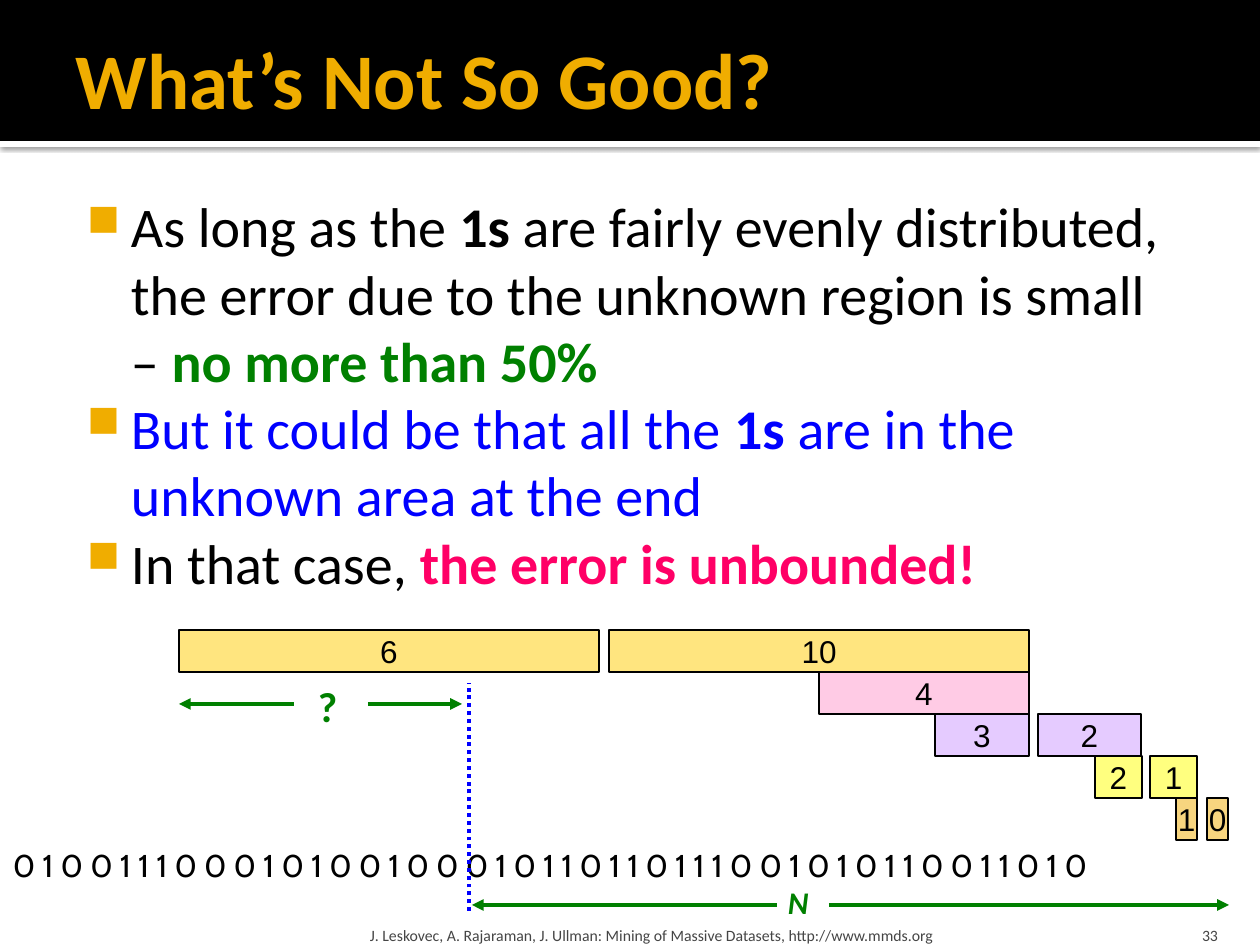
import pptx
import pptx.util
import pptx.dml.color
import pptx.enum.dml
import pptx.enum.shapes
import pptx.enum.text
import pptx.oxml
import pptx.oxml.ns

RGBColor = pptx.dml.color.RGBColor
Align = pptx.enum.text.PP_ALIGN
Anchor = pptx.enum.text.MSO_ANCHOR

BLACK = RGBColor(0, 0, 0)
WHITE = RGBColor(255, 255, 255)
GRAY = RGBColor(0x45, 0x45, 0x45)
AMBER = RGBColor(0xF0, 0xAD, 0x00)
GREEN = RGBColor(0, 0x80, 0)
BLUE = RGBColor(0, 0, 255)
ROSE = RGBColor(255, 0, 0x66)
GOLD = RGBColor(255, 0xCC, 0)
PINK = RGBColor(255, 0x99, 0xCC)
VIOLET = RGBColor(0xCC, 0x99, 255)
YELLOW = RGBColor(255, 255, 0)

PX_PER_INCH = 126
ROW_TOP, ROW_HEIGHT = 630, 42
BODY_BOX = (63, 179, 1134, 724)
BODY_INSETS = (8, 13, 13, 6)

BULLETS = [
    [("As long as the ", BLACK, False), ("1s ", BLACK, True),
     ("are fairly evenly distributed, the error due to the unknown region is small – ", BLACK, False),
     ("no more than 50%", GREEN, True)],
    [("But it could be that all the ", BLUE, False), ("1s ", BLUE, True),
     ("are in the unknown area at the end", BLUE, False)],
    [("In that case, ", BLACK, False), ("the error is unbounded!", ROSE, True)],
]
BITS = "010011100010100100010110110111001010110011010"

BUCKET_ROWS = [
    (GOLD, [("6", 179, 420), ("10", 609, 420)]),
    (PINK, [("4", 819, 210)]),
    (VIOLET, [("3", 935, 94), ("2", 1038, 103)]),
    (YELLOW, [("2", 1095, 47), ("1", 1150, 47)]),
    (AMBER, [("1", 1176, 21), ("0", 1207, 21)]),
]
ARROWS = [(777, 472, 905), (829, 1229, 905), (294, 179, 704), (368, 462, 704)]

LABELS = [
    ("What’s Not So Good?", (63, 10, 1134, 136), (13, 6, 6, 6), Anchor.MIDDLE, Align.LEFT,
     dict(name="Calibri", size=45, color=AMBER, bold=True)),
    ("33", (1130, 907, 101, 38), (13, 6, 13, 0), Anchor.BOTTOM, Align.RIGHT,
     dict(name="Calibri", size=9, color=GRAY)),
    ("J. Leskovec, A. Rajaraman, J. Ullman: Mining of Massive Datasets, http://www.mmds.org",
     (364, 907, 759, 38), (6, 6, 6, 0), Anchor.BOTTOM, Align.LEFT,
     dict(name="Calibri", size=9, color=GRAY)),
    (" ".join(BITS), (0, 840, 1236, 50), (13, 6, 13, 6), Anchor.TOP, Align.LEFT,
     dict(name="Cabin", size=18, color=BLACK)),
    ("N", (775, 877, 48, 50), (13, 6, 13, 6), Anchor.TOP, Align.LEFT,
     dict(name="Calibri", size=18, color=GREEN, bold=True, italic=True)),
    ("?", (305, 675, 44, 63), (13, 6, 13, 6), Anchor.TOP, Align.LEFT,
     dict(name="Calibri", size=24, color=GREEN, bold=True)),
]


def px(count):
    return pptx.util.Inches(count / PX_PER_INCH)


def add_xml(parent, tag, inner="", **attributes):
    listed = " ".join(f'{key}="{value}"' for key, value in attributes.items())
    element = pptx.oxml.parse_xml(
        f'<a:{tag} {pptx.oxml.ns.nsdecls("a")} {listed}>{inner}</a:{tag}>')
    parent.append(element)


def add_span(para, text, style):
    span = para.add_run()
    span.text = text
    for key, value in style.items():
        if key == "color":
            span.font.color.rgb = value
        else:
            setattr(span.font, key, pptx.util.Pt(value) if key == "size" else value)


def add_box(page, place, insets, anchor):
    box = page.shapes.add_textbox(*map(px, place))
    frame = box.text_frame
    sides = ("margin_left", "margin_top", "margin_right", "margin_bottom")
    settings = dict(zip(sides, map(px, insets)), word_wrap=True, vertical_anchor=anchor)
    for key, value in settings.items():
        setattr(frame, key, value)
    return frame


def add_rectangle(page, place, color):
    shape = page.shapes.add_shape(pptx.enum.shapes.MSO_SHAPE.RECTANGLE, *map(px, place))
    shape.shadow.inherit = False
    shape.fill.solid()
    shape.fill.fore_color.rgb = color
    shape.line.fill.background()
    return shape


def add_banner(page):
    strip = add_rectangle(page, (0, 141, 1260, 6), WHITE)
    effects = strip._element.spPr.find(pptx.oxml.ns.qn("a:effectLst"))
    add_xml(effects, "outerShdw", '<a:srgbClr val="000000"><a:alpha val="60000"/></a:srgbClr>',
            blurRad=pptx.util.Pt(2.5), dist=pptx.util.Pt(0.8), dir=5400000, rotWithShape=0)
    add_rectangle(page, (0, 0, 1260, 141), BLACK)


def add_bullets(page):
    frame = add_box(page, BODY_BOX, BODY_INSETS, Anchor.TOP)
    for index, spans in enumerate(BULLETS):
        para = frame.add_paragraph() if index else frame.paragraphs[0]
        for text, color, bold in spans:
            add_span(para, text, dict(name="Calibri", size=32, color=color, bold=bold))
        properties = para._p.get_or_add_pPr()
        properties.set("marL", str(px(60)))
        properties.set("indent", str(px(-44)))
        add_xml(properties, "buClr", f'<a:srgbClr val="{AMBER}"/>')
        add_xml(properties, "buSzPct", val=80000)
        add_xml(properties, "buChar", char="■")


def add_bucket(page, text, place, color):
    bucket = add_rectangle(page, place, color)
    add_xml(bucket.fill._xPr.solidFill.srgbClr, "alpha", val=50000)
    bucket.line.color.rgb = BLACK
    bucket.line.width = pptx.util.Pt(0.75)
    frame = bucket.text_frame
    frame.word_wrap = False
    frame.vertical_anchor = Anchor.MIDDLE
    para = frame.paragraphs[0]
    para.alignment = Align.CENTER
    add_span(para, text, dict(name="Arial", size=18, color=BLACK))


def add_line(page, ends, color):
    line = page.shapes.add_connector(pptx.enum.shapes.MSO_CONNECTOR.STRAIGHT, *map(px, ends))
    line.line.color.rgb = color
    line.line.width = pptx.util.Pt(2.25)
    add_xml(line._element.spPr, "effectLst")
    return line


def main():
    deck = pptx.Presentation()
    deck.slide_width, deck.slide_height = px(1260), px(945)
    page = deck.slides.add_slide(deck.slide_layouts[6])
    add_banner(page)
    add_bullets(page)
    for text, place, insets, anchor, alignment, style in LABELS:
        para = add_box(page, place, insets, anchor).paragraphs[0]
        para.alignment = alignment
        add_span(para, text, style)
    for row, (color, buckets) in enumerate(BUCKET_ROWS):
        for text, left, width in buckets:
            add_bucket(page, text, (left, ROW_TOP + row * ROW_HEIGHT, width, ROW_HEIGHT), color)
    for start, end, height in ARROWS:
        arrow = add_line(page, (start, height, end, height), GREEN)
        add_xml(arrow.line._get_or_add_ln(), "tailEnd", type="triangle")
    window_edge = add_line(page, (469, 911, 469, 683), BLUE)
    window_edge.line.dash_style = pptx.enum.dml.MSO_LINE.ROUND_DOT
    deck.save("out.pptx")


if __name__ == "__main__":
    main()
